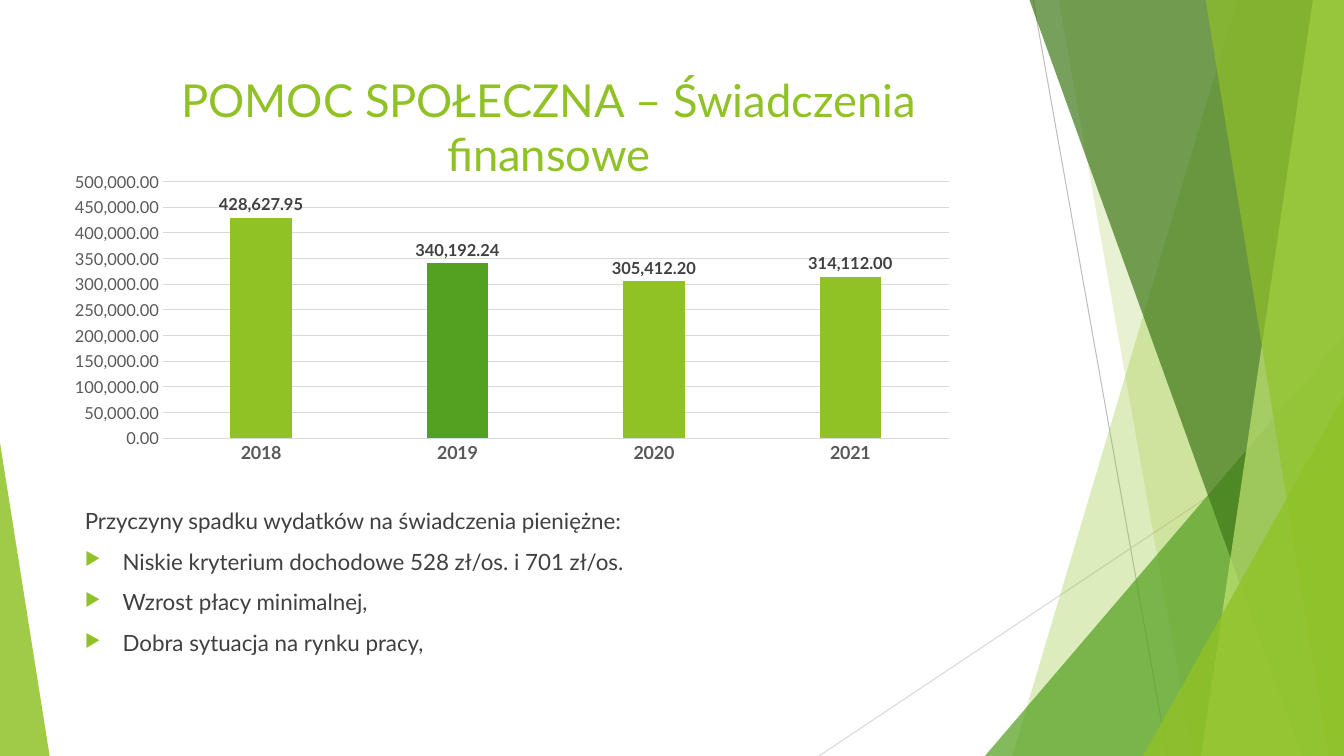
import lxml.etree
import pptx
import pptx.chart.data
import pptx.dml.color
import pptx.enum.chart
import pptx.enum.shapes
import pptx.enum.text
import pptx.oxml.ns
import pptx.util

Pt = pptx.util.Pt
RGB = pptx.dml.color.RGBColor
qn = pptx.oxml.ns.qn

LIME = RGB(0x90, 0xC2, 0x26)
GREEN = RGB(0x54, 0xA0, 0x21)
DARK_GREEN = RGB(0x3F, 0x78, 0x19)
PALE_LIME = RGB(0xC0, 0xE4, 0x74)
TEXT = RGB(0x40, 0x40, 0x40)
AXIS_TEXT = RGB(0x59, 0x59, 0x59)
GRID = RGB(0xD9, 0xD9, 0xD9)
RULE = RGB(0xBF, 0xBF, 0xBF)

WIDTH, HEIGHT = 960, 540


def add_xml(parent, tag, **attrs):
    return lxml.etree.SubElement(parent, qn(tag), attrs)


class Deck:
    def __init__(self, font):
        self.font = font
        self.prs = pptx.Presentation()
        self.prs.slide_width, self.prs.slide_height = Pt(WIDTH), Pt(HEIGHT)
        self.s = self.prs.slides.add_slide(self.prs.slide_layouts[6])

    def line(self, x1, y1, x2, y2, color):
        c = self.s.shapes.add_connector(
            pptx.enum.shapes.MSO_CONNECTOR.STRAIGHT, Pt(x1), Pt(y1), Pt(x2), Pt(y2))
        c.line.color.rgb = color
        c.line.width = Pt(0.75)
        add_xml(c._element.spPr, "a:effectLst")

    def paint(self, sp, color, opacity):
        sp.shadow.inherit = False
        sp.line.fill.background()
        sp.fill.solid()
        sp.fill.fore_color.rgb = color
        clr = sp._element.spPr.find(".//" + qn("a:srgbClr"))
        add_xml(clr, "a:alpha", val=str(opacity * 1000))

    def band(self, top_x, bottom_x, color, opacity):
        """Fill from a slanted left edge to the slide's right edge."""
        fb = self.s.shapes.build_freeform(top_x, -1, scale=Pt(1))
        fb.add_line_segments([(WIDTH, -1), (WIDTH, HEIGHT), (bottom_x, HEIGHT)], close=True)
        self.paint(fb.convert_to_shape(), color, opacity)

    def triangle(self, x, y, w, apex, color, opacity):
        sp = self.s.shapes.add_shape(
            pptx.enum.shapes.MSO_SHAPE.ISOSCELES_TRIANGLE,
            Pt(x), Pt(y), Pt(w), Pt(HEIGHT - y))
        sp.adjustments[0] = apex
        self.paint(sp, color, opacity)

    def style(self, font, size, color, bold=False):
        font.name, font.size, font.bold = self.font, Pt(size), bold
        font.color.rgb = color

    def text(self, x, y, w, h, paragraphs, size, color, align=None, gap=0):
        """Paragraphs are (text, has_bullet) pairs."""
        tf = self.s.shapes.add_textbox(Pt(x), Pt(y), Pt(w), Pt(h)).text_frame
        tf.word_wrap = True
        for i, (text, has_bullet) in enumerate(paragraphs):
            p = tf.add_paragraph() if i else tf.paragraphs[0]
            p.text = text
            if has_bullet:
                self.bullet(p)
            if i:
                p.space_before = Pt(gap)
            p.alignment = align
            self.style(p.runs[0].font, size, color)

    def bullet(self, p):
        pPr = p._p.get_or_add_pPr()
        pPr.set("marL", str(Pt(27)))
        pPr.set("indent", str(-Pt(27)))
        add_xml(add_xml(pPr, "a:buClr"), "a:srgbClr", val=str(LIME))
        add_xml(pPr, "a:buSzPct", val="80000")
        add_xml(pPr, "a:buChar", char="▶")

    def columns(self, x, y, w, h, categories, values, highlight):
        data = pptx.chart.data.CategoryChartData(number_format="#,##0.00")
        data.categories = categories
        data.add_series("Series 1", values)
        chart = self.s.shapes.add_chart(
            pptx.enum.chart.XL_CHART_TYPE.COLUMN_CLUSTERED,
            Pt(x), Pt(y), Pt(w), Pt(h), data).chart
        chart.has_legend = chart.has_title = False
        self.style(chart.font, 10, TEXT)

        # Columns and their labels
        plot = chart.plots[0]
        plot.vary_by_categories = False
        plot.gap_width, plot.overlap = 219, -27
        ser = plot.series[0]
        for fmt, color in ((ser.format, LIME), (ser.points[highlight].format, GREEN)):
            fmt.fill.solid()
            fmt.fill.fore_color.rgb = color
        plot.has_data_labels = True
        labels = plot.data_labels
        labels.show_value = True
        labels.position = pptx.enum.chart.XL_LABEL_POSITION.OUTSIDE_END
        labels.number_format, labels.number_format_is_linked = "#,##0.00", False
        self.style(labels.font, 12, TEXT, bold=True)

        # Axes
        cat, val = chart.category_axis, chart.value_axis
        for axis in (cat, val):
            axis.major_tick_mark = axis.minor_tick_mark = pptx.enum.chart.XL_TICK_MARK.NONE
        self.style(cat.tick_labels.font, 13, AXIS_TEXT, bold=True)
        self.style(val.tick_labels.font, 12, AXIS_TEXT)
        val.minimum_scale, val.maximum_scale, val.major_unit = 0, 500000, 50000
        val.tick_labels.number_format = "#,##0.00"
        val.tick_labels.number_format_is_linked = False
        val.format.line.fill.background()
        val.has_major_gridlines = True
        for line in (cat.format.line, val.major_gridlines.format.line):
            line.color.rgb = GRID
            line.width = Pt(0.75)
        self.place_plot(chart, x=0.08, y=0.02, w=0.89, h=0.84)

    def place_plot(self, chart, **box):
        area = chart._chartSpace.find(".//" + qn("c:plotArea"))
        for old in area.findall(qn("c:layout")):
            area.remove(old)
        layout = add_xml(area, "c:layout")
        area.insert(0, layout)
        manual = add_xml(layout, "c:manualLayout")
        add_xml(manual, "c:layoutTarget", val="inner")
        for key in "xy":
            add_xml(manual, f"c:{key}Mode", val="edge")
        for key, share in box.items():
            add_xml(manual, f"c:{key}", val=str(share))


def main():
    deck = Deck("Lato")

    # Background facets
    deck.line(738, 0, 834, HEIGHT, RULE)
    deck.line(WIDTH, 290, 585, HEIGHT, GRID)
    deck.band(884, 723, LIME, 30)
    deck.band(756, 852, LIME, 20)
    deck.triangle(703.5, 240, 256.5, 1, GREEN, 72)
    deck.band(735, 930, DARK_GREEN, 70)
    deck.band(938, 858, PALE_LIME, 70)
    deck.band(861, 949, LIME, 65)
    deck.triangle(816.5, 283, 143.5, 1, LIME, 80)
    deck.triangle(0, 316, 35.5, 0, LIME, 85)

    # Title
    deck.text(53.5, 48, 677, 61, [("POMOC SPOŁECZNA – Świadczenia finansowe", False)],
              32.4, LIME, align=pptx.enum.text.PP_ALIGN.CENTER)

    # Reasons
    deck.text(53.5, 358.5, 623, 133, [
        ("Przyczyny spadku wydatków na świadczenia pieniężne:", False),
        ("Niskie kryterium dochodowe 528 zł/os. i 701 zł/os.", True),
        ("Wzrost płacy minimalnej,", True),
        ("Dobra sytuacja na rynku pracy,", True),
    ], 16, TEXT, gap=10)

    # Yearly spending
    deck.columns(53.5, 122.5, 643, 221, ["2018", "2019", "2020", "2021"],
                 [428627.95, 340192.24, 305412.20, 314112.00], highlight=1)

    deck.prs.save("out.pptx")


if __name__ == "__main__":
    main()
